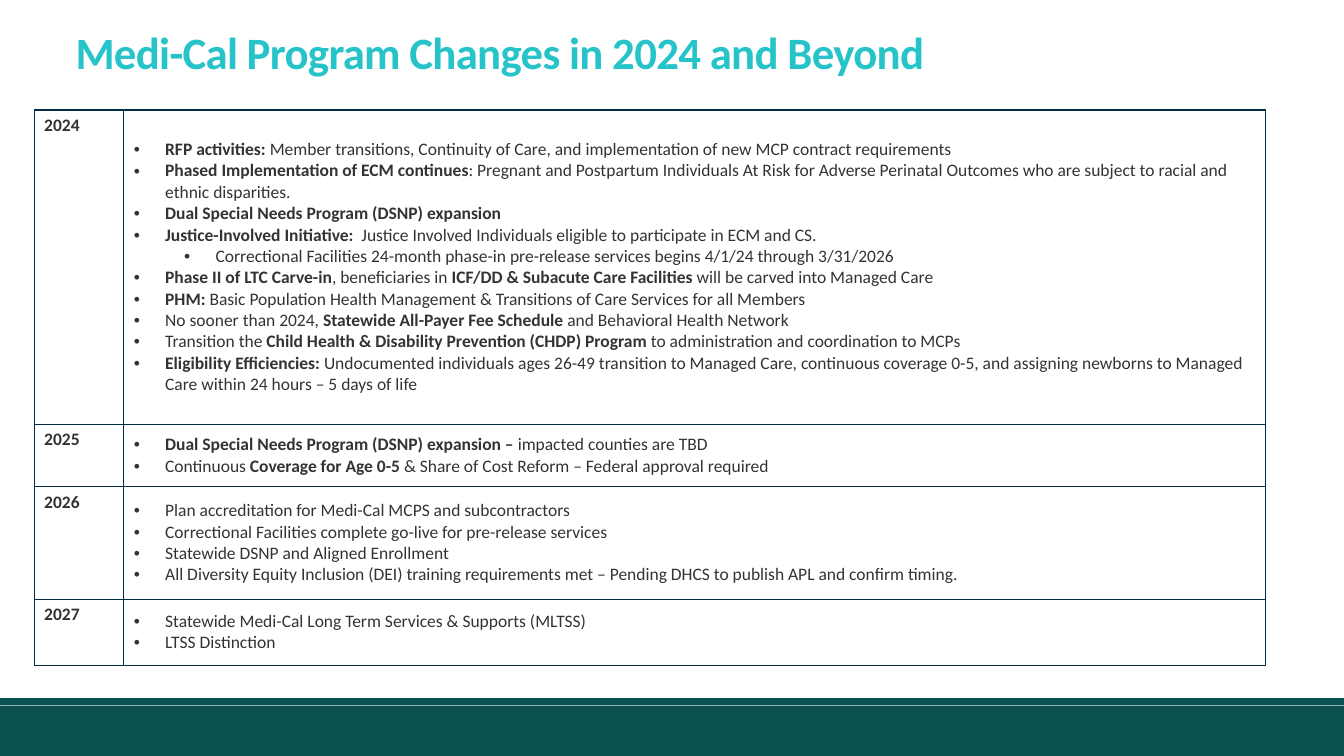
from lxml import etree
from pptx import Presentation
from pptx.dml.color import RGBColor
from pptx.enum.shapes import MSO_SHAPE
from pptx.enum.text import MSO_ANCHOR, MSO_AUTO_SIZE, PP_ALIGN
from pptx.oxml.ns import qn
from pptx.util import Cm, Pt

RECTANGLE = MSO_SHAPE.RECTANGLE
TOP, MIDDLE = MSO_ANCHOR.TOP, MSO_ANCHOR.MIDDLE
LEFT = PP_ALIGN.LEFT
NO_AUTOFIT = MSO_AUTO_SIZE.NONE

WHITE = RGBColor(0xFF, 0xFF, 0xFF)
TURQUOISE = RGBColor(0x26, 0xC3, 0xC9)
DEEP_TEAL = RGBColor(0x0B, 0x51, 0x52)
NAVY = RGBColor(0x00, 0x2C, 0x48)
CHARCOAL = RGBColor(0x33, 0x33, 0x33)
FONT = "Calibri"

PAGE_WIDTH, PAGE_HEIGHT = Cm(33.87), Cm(19.05)
COLUMN_WIDTHS = [2.26, 28.78]
BULLET_INDENT = Cm(0.79)
LEVEL_STEP = Cm(1.27)
BOLD_MARK = "**"

PROGRAM_CHANGES = [
    ("2024", 7.92, [
        (0, "**RFP activities: **Member transitions, Continuity of Care, and implementation of new MCP contract requirements"),
        (0, "**Phased Implementation of ECM continues**: Pregnant and Postpartum Individuals At Risk for Adverse Perinatal "
            "Outcomes who are subject to racial and ethnic disparities."),
        (0, "**Dual Special Needs Program (DSNP) expansion**"),
        (0, "**Justice-Involved Initiative: ** Justice Involved Individuals eligible to participate in ECM and CS."),
        (1, "Correctional Facilities 24-month phase-in pre-release services begins 4/1/24 through 3/31/2026"),
        (0, "**Phase II of LTC Carve-in**, beneficiaries in **ICF/DD & Subacute Care Facilities **will be carved into Managed Care"),
        (0, "**PHM: **Basic Population Health Management & Transitions of Care Services for all Members"),
        (0, "No sooner than 2024, **Statewide All-Payer Fee Schedule **and Behavioral Health Network"),
        (0, "Transition the **Child Health & Disability Prevention (CHDP) Program **to administration and coordination to MCPs"),
        (0, "**Eligibility Efficiencies:** Undocumented individuals ages 26-49 transition to Managed Care, continuous "
            "coverage 0-5, and assigning newborns to Managed Care within 24 hours – 5 days of life"),
    ]),
    ("2025", 1.57, [
        (0, "**Dual Special Needs Program (DSNP) expansion – **impacted counties are TBD"),
        (0, "Continuous **Coverage for Age 0-5 **& Share of Cost Reform – Federal approval required"),
    ]),
    ("2026", 2.84, [
        (0, "Plan accreditation for Medi-Cal MCPS and subcontractors"),
        (0, "Correctional Facilities complete go-live for pre-release services"),
        (0, "Statewide DSNP and Aligned Enrollment"),
        (0, "All Diversity Equity Inclusion (DEI) training requirements met – Pending DHCS to publish APL and confirm timing."),
    ]),
    ("2027", 1.66, [
        (0, "Statewide Medi-Cal Long Term Services & Supports (MLTSS)"),
        (0, "LTSS Distinction"),
    ]),
]


def format_span(span, size, color, bold):
    span.font.name = FONT
    span.font.size = Pt(size)
    span.font.color.rgb = color
    span.font.bold = bold


def add_band(page, top, height):
    band = page.shapes.add_shape(RECTANGLE, 0, Cm(top), PAGE_WIDTH, Cm(height))
    band.shadow.inherit = False
    band.fill.solid()
    band.fill.fore_color.rgb = DEEP_TEAL
    band.line.fill.background()


def set_title(page, text):
    title = page.shapes.title
    title.left, title.top, title.width, title.height = Cm(1.65), Cm(0.71), Cm(27.94), Cm(4.04)
    frame = title.text_frame
    frame.text = text
    frame.word_wrap = True
    frame.auto_size = NO_AUTOFIT
    frame.vertical_anchor = TOP
    para = frame.paragraphs[0]
    para.alignment = LEFT
    para.line_spacing = 0.85
    span = para.runs[0]
    format_span(span, 32, TURQUOISE, True)
    span.font._element.set("spc", "-50")


def style_cell(cell, anchor):
    cell.vertical_anchor = anchor
    cell.fill.solid()
    cell.fill.fore_color.rgb = WHITE
    properties = cell._tc.get_or_add_tcPr()
    for position, side in enumerate(("a:lnL", "a:lnR", "a:lnT", "a:lnB")):
        border = etree.Element(qn(side), w=str(Pt(1)))
        fill = etree.SubElement(border, qn("a:solidFill"))
        etree.SubElement(fill, qn("a:srgbClr"), val=str(NAVY))
        properties.insert(position, border)


def write_marked_text(para, text):
    for index, piece in enumerate(text.split(BOLD_MARK)):
        if piece:
            span = para.add_run()
            span.text = piece
            format_span(span, 12.5, CHARCOAL, index % 2 == 1)


def add_bullet(para, level):
    para.level = level
    properties = para._p.get_or_add_pPr()
    properties.set("marL", str(BULLET_INDENT + level * LEVEL_STEP))
    properties.set("indent", str(-BULLET_INDENT))
    etree.SubElement(properties, qn("a:buFont"), typeface="Arial")
    etree.SubElement(properties, qn("a:buChar"), char="•")


def fill_bullets(cell, items):
    frame = cell.text_frame
    for index, (level, text) in enumerate(items):
        para = frame.add_paragraph() if index else frame.paragraphs[0]
        add_bullet(para, level)
        write_marked_text(para, text)


def add_changes_table(page):
    height = sum(row_height for _, row_height, _ in PROGRAM_CHANGES)
    table = page.shapes.add_table(
        len(PROGRAM_CHANGES), len(COLUMN_WIDTHS),
        Cm(0.86), Cm(2.77), Cm(sum(COLUMN_WIDTHS)), Cm(height)).table
    table.first_row = False
    table.horz_banding = False
    for column, width in zip(table.columns, COLUMN_WIDTHS):
        column.width = Cm(width)
    for row, (year, row_height, items) in zip(table.rows, PROGRAM_CHANGES):
        row.height = Cm(row_height)
        year_cell, changes_cell = row.cells
        style_cell(year_cell, TOP)
        write_marked_text(year_cell.text_frame.paragraphs[0], BOLD_MARK + year + BOLD_MARK)
        style_cell(changes_cell, MIDDLE)
        fill_bullets(changes_cell, items)


def main():
    deck = Presentation()
    deck.slide_width, deck.slide_height = PAGE_WIDTH, PAGE_HEIGHT
    page = deck.slides.add_slide(deck.slide_layouts[5])
    add_band(page, 17.78, 1.27)
    add_band(page, 17.59, 0.18)
    set_title(page, "Medi-Cal Program Changes in 2024 and Beyond")
    add_changes_table(page)
    deck.save("out.pptx")


if __name__ == "__main__":
    main()
